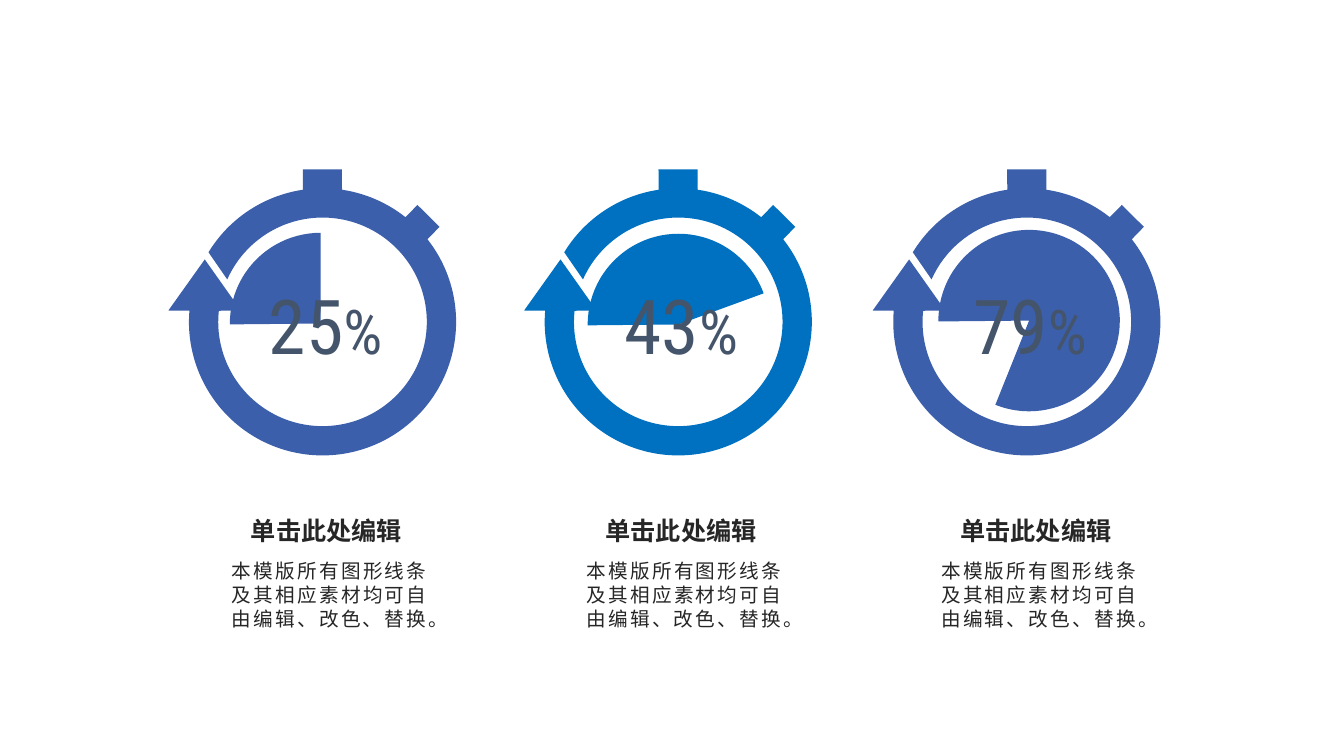
from math import cos, radians, sin

from lxml.etree import SubElement
from pptx import Presentation
from pptx.dml.color import RGBColor
from pptx.enum.shapes import MSO_SHAPE
from pptx.enum.text import MSO_ANCHOR, PP_ALIGN
from pptx.oxml.ns import qn
from pptx.util import Pt

INDIGO = RGBColor(0x3B, 0x5F, 0xAB)
BLUE = RGBColor(0x00, 0x70, 0xC0)
SLATE = RGBColor(0x44, 0x54, 0x6A)
DARK = RGBColor(0x26, 0x26, 0x26)
HAN = "Noto Sans CJK SC"
LATIN = "Roboto Condensed"

TITLE = "单击此处编辑"
BODY = "本模版所有图形线条及其相应素材均可自由编辑、改色、替换。"

# Number, colour, watch left, pie left, pie top, pie end angle
WATCHES = [
    ("25", INDIGO, 120.3, 164.2, 166.3, 270),
    ("43", BLUE, 374.4, 419.8, 167, 339.95),
    ("79", INDIGO, 623.4, 670.3, 164.2, 111.82),
]
TOP = 121
PIE_START = 179.44
PIE_SIZE = 129.6
CENTER = (110.1, 108.9)
OUTER, INNER = 95.4, 74.5
CAPTION_LEFT, CAPTION_STEP = 158.4, 253.4

# Ring outline: straight runs of corners, and arcs as (radius, angles)
RUNS = [
    ([(193.7, 41), (177.9, 25.4)], (OUTER, [-51.6, -81.6])),
    ([(124, 0), (96, 0)], (OUTER, [-98.4, -148.6])),
    ([], (INNER, [-156, 0, 186.1])),
    ([(51.8, 100.8), (26, 64.3), (0, 100.8)], (OUTER, [184.8, 90, 0, -38.2])),
]


def dial(radius, angle):
    """Point on the dial, with the angle clockwise from the right."""
    turn = radians(angle)
    return CENTER[0] + radius * cos(turn), CENTER[1] + radius * sin(turn)


def outline():
    """Corners of the ring, and the arcs that lead to some of them."""
    points, arcs = [], {}
    for corners, (radius, angles) in RUNS:
        points += corners + [dial(radius, angles[0])]
        for start, end in zip(angles, angles[1:]):
            arcs[len(points)] = (radius, start, end - start)
            points.append(dial(radius, end))
    return points, arcs


def bend(line, radius, start, sweep):
    """Turn one straight segment of a freeform into an arc."""
    line.clear()
    line.tag = qn("a:arcTo")
    for key in ("wR", "hR"):
        line.set(key, str(Pt(radius)))
    line.set("stAng", str(round(start % 360 * 60000)))
    line.set("swAng", str(round(sweep * 60000)))


def paint(shape, color):
    shape.shadow.inherit = False
    shape.fill.solid()
    shape.fill.fore_color.rgb = color
    shape.line.fill.background()


def add_pie(slide, left, top, end, color):
    pie = slide.shapes.add_shape(MSO_SHAPE.PIE, Pt(left), Pt(top), Pt(PIE_SIZE), Pt(PIE_SIZE))
    # Angles are stored in 60000ths of a degree, adjustments in 100000ths
    pie.adjustments[0] = PIE_START * 0.6
    pie.adjustments[1] = end * 0.6
    paint(pie, color)


def add_ring(slide, left, color):
    points, arcs = outline()
    points = [(Pt(left + x), Pt(TOP + y)) for x, y in points]
    pen = slide.shapes.build_freeform(*points[0])
    pen.add_line_segments(points[1:], close=True)
    ring = pen.convert_to_shape()
    lines = list(ring._element.iter(qn("a:lnTo")))
    for index, arc in arcs.items():
        bend(lines[index - 1], *arc)
    paint(ring, color)


def add_box(slide, left, top, width, height):
    box = slide.shapes.add_textbox(Pt(left), Pt(top), Pt(width), Pt(height))
    box.text_frame.word_wrap = True
    return box.text_frame


def style(run, size, face, color, bold=False):
    font = run.font
    font.size, font.name, font.bold = Pt(size), face, bold
    font.color.rgb = color
    SubElement(font._element, qn("a:ea")).set("typeface", face)


def add_rate(slide, left, number):
    frame = add_box(slide, left, 197.3, 102.2, 68.4)
    frame.margin_left = frame.margin_right = 0
    frame.margin_top = frame.margin_bottom = 0
    frame.vertical_anchor = MSO_ANCHOR.MIDDLE
    line = frame.paragraphs[0]
    line.alignment = PP_ALIGN.CENTER
    line.space_after = Pt(3)
    for text, size in ((number, 54), ("%", 44)):
        run = line.add_run()
        run.text = text
        style(run, size, LATIN, SLATE)


def add_words(slide, place, text, size, pitch, bold=False):
    frame = add_box(slide, *place)
    frame.text = text
    line = frame.paragraphs[0]
    line.line_spacing = Pt(pitch)
    style(line.runs[0], size, HAN, DARK, bold)
    return line


def add_caption(slide, left):
    body = add_words(slide, (left, 396, 154.8, 66.2), BODY, 14, 16.8)
    body.alignment = PP_ALIGN.JUSTIFY
    body.runs[0].font._element.set("spc", "150")  # letter spacing
    add_words(slide, (left + 13.7, 368.6, 161.3, 25.2), TITLE, 18, 17.8, bold=True)


def main():
    deck = Presentation()
    deck.slide_width, deck.slide_height = Pt(960), Pt(540)
    slide = deck.slides.add_slide(deck.slide_layouts[6])

    # Stopwatches
    for number, color, left, pie_left, pie_top, end in WATCHES:
        add_pie(slide, pie_left, pie_top, end, color)
        add_ring(slide, left, color)
        add_rate(slide, left + 61.2, number)

    # Captions
    for i in range(len(WATCHES)):
        add_caption(slide, CAPTION_LEFT + i * CAPTION_STEP)

    deck.save("out.pptx")


if __name__ == "__main__":
    main()
